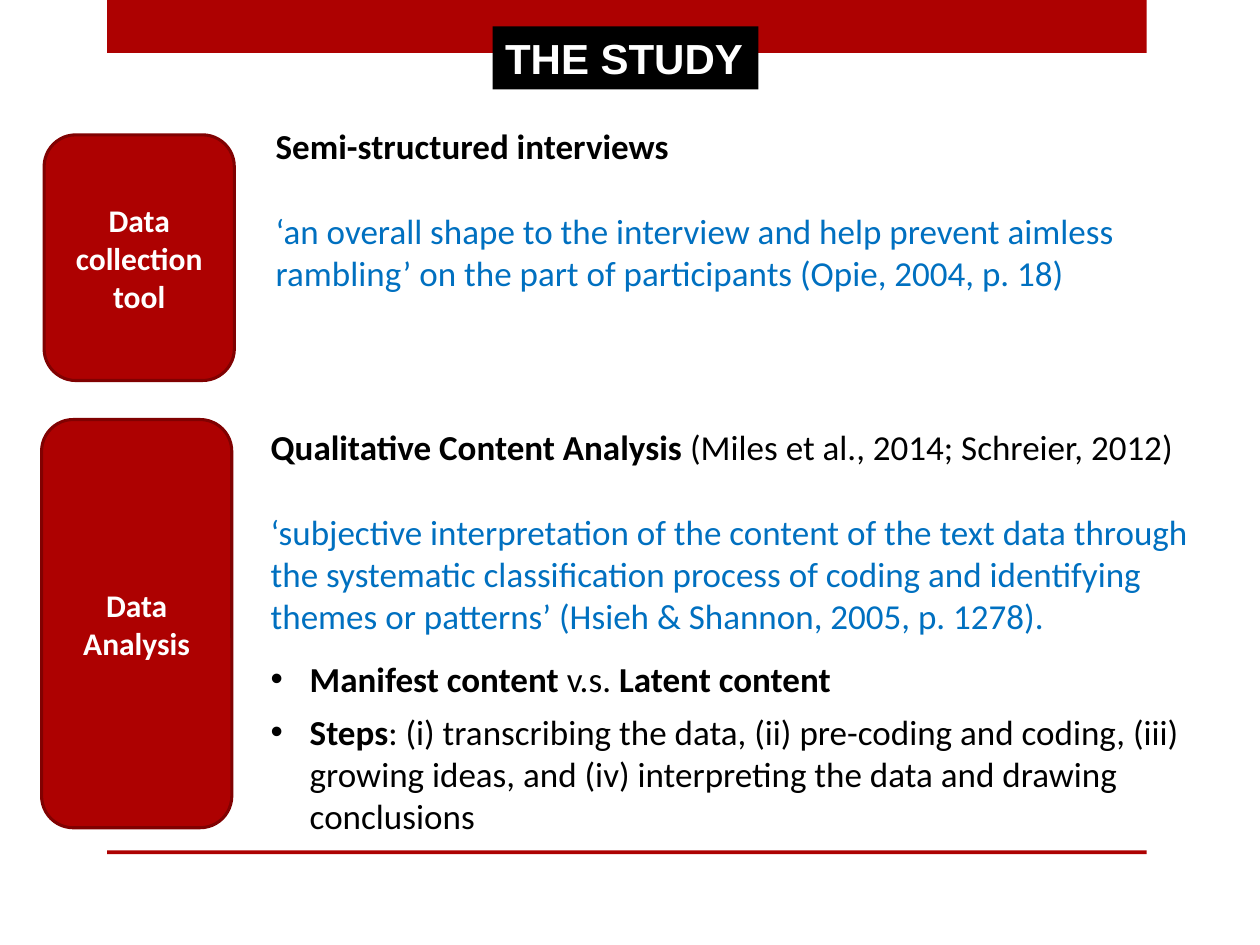
from dataclasses import dataclass

from lxml import etree
from pptx import Presentation
from pptx.dml.color import RGBColor
from pptx.enum.shapes import MSO_SHAPE
from pptx.enum.text import MSO_ANCHOR, PP_ALIGN
from pptx.oxml.ns import qn
from pptx.shapes.autoshape import Shape
from pptx.slide import Slide
from pptx.text.text import TextFrame
from pptx.util import Inches, Pt

RECTANGLE = MSO_SHAPE.RECTANGLE
ROUNDED_LABEL = MSO_SHAPE.FLOWCHART_ALTERNATE_PROCESS
LEFT, CENTER = PP_ALIGN.LEFT, PP_ALIGN.CENTER
TOP, MIDDLE = MSO_ANCHOR.TOP, MSO_ANCHOR.MIDDLE


@dataclass(frozen=True)
class Theme:
    red: str = "AD0101"
    dark_red: str = "800101"
    black: str = "000000"
    white: str = "FFFFFF"
    blue: str = "0070C0"
    title_font: str = "Arial"
    body_font: str = "Calibri"
    title_size: float = 24
    label_size: float = 18
    body_size: float = 20
    outline: float = 1.75
    line_gap: float = 24.4
    bullet_indent: float = 0.31


THEME = Theme()


@dataclass(frozen=True)
class Box:
    left: float
    top: float
    width: float
    height: float

    def lengths(self) -> tuple[Inches, Inches, Inches, Inches]:
        return Inches(self.left), Inches(self.top), Inches(self.width), Inches(self.height)


@dataclass(frozen=True)
class Span:
    text: str
    bold: bool = False
    color: str = THEME.black


@dataclass(frozen=True)
class Line:
    spans: tuple[Span, ...]
    space_after: float = 0
    bullet: bool = False


@dataclass(frozen=True)
class Section:
    label_box: Box
    label: tuple[str, ...]
    body_box: Box
    body: tuple[Line, ...]


BARS = (Box(0.85, 0, 8.25, 0.42), Box(0.85, 6.75, 8.25, 0.03))
TITLE_BOX = Box(3.91, 0.21, 2.11, 0.5)

SECTIONS = (
    Section(
        Box(0.35, 1.07, 1.51, 1.95),
        ("Data collection tool",),
        Box(2.09, 0.94, 7.4, 1.75),
        (
            Line((Span("Semi-structured interviews", bold=True),), THEME.line_gap),
            Line((Span("‘an overall shape to the interview and help prevent aimless "
                       "rambling’ on the part of participants (Opie, 2004, p. 18)",
                       color=THEME.blue),)),
        ),
    ),
    Section(
        Box(0.33, 3.33, 1.51, 3.24),
        ("Data", "Analysis"),
        Box(2.05, 3.33, 7.79, 3.8),
        (
            Line((Span("Qualitative Content Analysis ", bold=True),
                  Span("(Miles et al., 2014; Schreier, 2012)")), THEME.line_gap),
            Line((Span("‘subjective interpretation of the content of the text data through "
                       "the systematic classification process of coding and identifying "
                       "themes or patterns’ (Hsieh & Shannon, 2005, p. 1278).",
                       color=THEME.blue),), 12),
            Line((Span("Manifest content ", bold=True), Span("v.s. "),
                  Span("Latent content", bold=True)), 6, bullet=True),
            Line((Span("Steps", bold=True),
                  Span(": (i) transcribing the data, (ii) pre-coding and coding, (iii) "
                       "growing ideas, and (iv) interpreting the data and drawing "
                       "conclusions")), bullet=True),
        ),
    ),
)


def write_text(frame: TextFrame, lines: tuple[Line, ...], *, size: float,
               font: str = THEME.body_font, align: PP_ALIGN = LEFT,
               anchor: MSO_ANCHOR = TOP, wrap: bool = True) -> None:
    frame.word_wrap = wrap
    frame.vertical_anchor = anchor
    for index, line in enumerate(lines):
        paragraph = frame.add_paragraph() if index else frame.paragraphs[0]
        paragraph.alignment = align
        paragraph.space_after = Pt(line.space_after)
        if line.bullet:
            indent = Inches(THEME.bullet_indent)
            properties = paragraph._p.get_or_add_pPr()
            properties.set("marL", str(indent))
            properties.set("indent", str(-indent))
            etree.SubElement(properties, qn("a:buFont"), typeface="Arial")
            etree.SubElement(properties, qn("a:buChar"), char="•")
        for span in line.spans:
            run = paragraph.add_run()
            run.text = span.text
            run.font.name = font
            run.font.size = Pt(size)
            run.font.bold = span.bold
            run.font.color.rgb = RGBColor.from_string(span.color)


def add_filled_shape(slide: Slide, kind: MSO_SHAPE, box: Box, fill: str,
                     outline: str | None = None) -> Shape:
    shape = slide.shapes.add_shape(kind, *box.lengths())
    shape.shadow.inherit = False
    shape.fill.solid()
    shape.fill.fore_color.rgb = RGBColor.from_string(fill)
    if outline:
        shape.line.color.rgb = RGBColor.from_string(outline)
        shape.line.width = Pt(THEME.outline)
    else:
        shape.line.fill.background()
    return shape


def white_line(text: str) -> Line:
    return Line((Span(text, bold=True, color=THEME.white),))


def add_section(slide: Slide, section: Section) -> None:
    """Draw a red label with its text beside it."""
    label = add_filled_shape(slide, ROUNDED_LABEL, section.label_box, THEME.red, THEME.dark_red)
    write_text(label.text_frame, tuple(white_line(text) for text in section.label),
               size=THEME.label_size, align=CENTER, anchor=MIDDLE)
    body = slide.shapes.add_textbox(*section.body_box.lengths())
    write_text(body.text_frame, section.body, size=THEME.body_size)


def main() -> None:
    presentation = Presentation()
    presentation.slide_width = Inches(10)
    presentation.slide_height = Inches(7.5)
    slide = presentation.slides.add_slide(presentation.slide_layouts[6])
    for bar in BARS:
        add_filled_shape(slide, RECTANGLE, bar, THEME.red)
    title = add_filled_shape(slide, RECTANGLE, TITLE_BOX, THEME.black)
    write_text(title.text_frame, (white_line("THE STUDY"),), size=THEME.title_size,
               font=THEME.title_font, wrap=False)
    for section in SECTIONS:
        add_section(slide, section)
    presentation.save("out.pptx")


if __name__ == "__main__":
    main()
